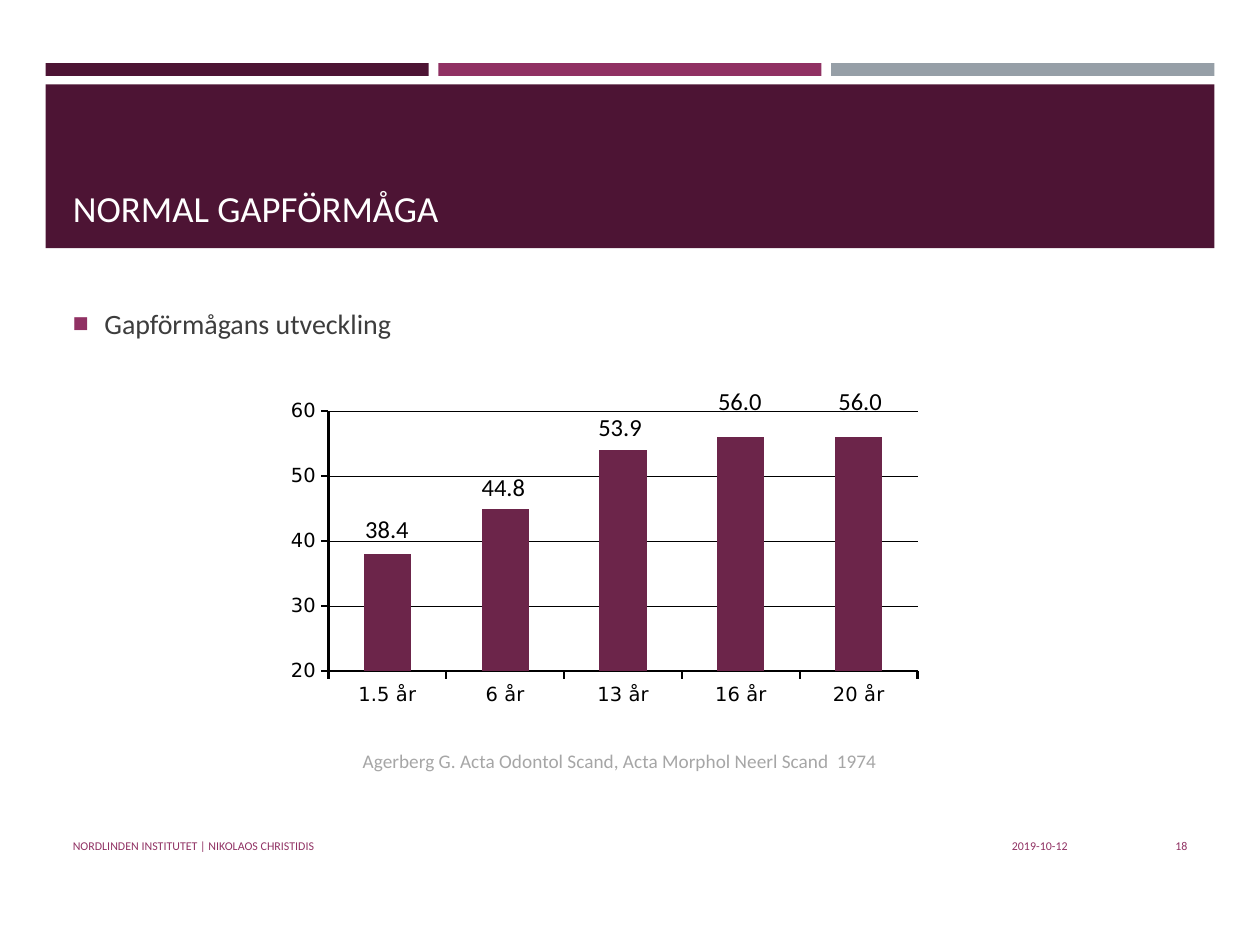
from lxml import etree
from pptx import Presentation
from pptx.chart.data import CategoryChartData
from pptx.dml.color import RGBColor
from pptx.enum.chart import XL_CHART_TYPE, XL_TICK_MARK
from pptx.enum.shapes import MSO_SHAPE
from pptx.enum.text import MSO_ANCHOR, MSO_AUTO_SIZE, PP_ALIGN
from pptx.oxml import parse_xml
from pptx.oxml.ns import nsdecls, qn
from pptx.util import Pt

COLUMN = XL_CHART_TYPE.COLUMN_CLUSTERED
OUTSIDE = XL_TICK_MARK.OUTSIDE
RECTANGLE = MSO_SHAPE.RECTANGLE
NO_AUTOFIT = MSO_AUTO_SIZE.NONE
TOP, MIDDLE, BOTTOM = MSO_ANCHOR.TOP, MSO_ANCHOR.MIDDLE, MSO_ANCHOR.BOTTOM
LEFT, RIGHT = PP_ALIGN.LEFT, PP_ALIGN.RIGHT

COLORS = {
    "plum": "4D1434",
    "berry": "903163",
    "steel": "969FA7",
    "column": "6C254A",
    "body": "3D3D3D",
    "source": "A6A6A6",
    "black": "000000",
    "white": "FFFFFF",
}
TEXT_FONT, CHART_FONT = "Calibri", "DejaVu Sans"

CATEGORIES = ["1.5 år", "6 år", "13 år", "16 år", "20 år"]
VALUES = [38, 45, 54, 56, 56]
# Text, left and top of each value label, relative to the chart
VALUE_LABELS = [
    ("38.4", 43.9, 69.1),
    ("44.8", 110.4, 45),
    ("53.9", 177.1, 10.8),
    ("56.0", 245.5, -3.9),
    ("56.0", 314.3, -3.9),
]


def rgb(name):
    return RGBColor.from_string(COLORS[name])


def set_font(font, size, color, name=TEXT_FONT):
    font.size = Pt(size)
    font.name = name
    font.color.rgb = rgb(color)


def place(shape, left, top, width, height):
    shape.left, shape.top = Pt(left), Pt(top)
    shape.width, shape.height = Pt(width), Pt(height)


def write(shape, text, size, color, anchor=TOP, align=LEFT, wrap=True):
    frame = shape.text_frame
    frame.text = text
    frame.word_wrap = wrap
    frame.auto_size = NO_AUTOFIT
    frame.vertical_anchor = anchor
    paragraph = frame.paragraphs[0]
    paragraph.alignment = align
    set_font(paragraph.font, size, color)
    return paragraph


def add_text(slide, box, text, size, color, **options):
    shape = slide.shapes.add_textbox(*map(Pt, box))
    write(shape, text, size, color, **options)


def add_bar(slide, box, color):
    shape = slide.shapes.add_shape(RECTANGLE, *map(Pt, box))
    shape.shadow.inherit = False
    shape.fill.solid()
    shape.fill.fore_color.rgb = rgb(color)
    shape.line.fill.background()


def add_header(slide, left, top, width, height):
    # Three strips above the title band
    gap = 5.5
    strip_width = (width - 2 * gap) / 3
    for index, color in enumerate(("plum", "berry", "steel")):
        add_bar(slide, (left + index * (strip_width + gap), top, strip_width, 7.4), color)
    add_bar(slide, (left, top + 12.2, width, height - 12.2), "plum")

    # Title, drawn above the band
    title = slide.shapes.title
    slide.shapes._spTree.append(title._element)
    place(title, left + 8.4, top + 19, width - 16.6, 80)
    write(title, "NORMAL GAPFÖRMÅGA", 21, "white", anchor=BOTTOM)


def add_body(slide, left, top, width, height):
    body = slide.placeholders[1]
    place(body, left, top, width, height)
    paragraph = write(body, "Gapförmågans utveckling", 16, "body")
    paragraph.space_before, paragraph.space_after = Pt(3.2), Pt(4.5)

    # Square bullet with a hanging indent
    properties = paragraph._p.get_or_add_pPr()
    properties.set("marL", str(Pt(18)))
    properties.set("indent", str(Pt(-18)))
    color = etree.SubElement(properties, qn("a:buClr"))
    etree.SubElement(color, qn("a:srgbClr"), val=COLORS["berry"])
    etree.SubElement(properties, qn("a:buSzPct"), val="60000")
    etree.SubElement(properties, qn("a:buFont"), typeface=TEXT_FONT)
    etree.SubElement(properties, qn("a:buChar"), char="■")


def format_axis(axis):
    axis.major_tick_mark = OUTSIDE
    axis.format.line.color.rgb = rgb("black")
    axis.format.line.width = Pt(1.25)
    set_font(axis.tick_labels.font, 11.1, "black", CHART_FONT)
    axis.tick_labels.font.bold = False


def set_plot_layout(chart, x, y, w, h):
    plot_area = chart._chartSpace.chart.plotArea
    for layout in plot_area.findall(qn("c:layout")):
        plot_area.remove(layout)
    sizes = "".join(f'<c:{key} val="{value}"/>' for key, value in zip("xywh", (x, y, w, h)))
    plot_area.insert(0, parse_xml(
        f'<c:layout {nsdecls("c")}><c:manualLayout><c:layoutTarget val="inner"/>'
        f'<c:xMode val="edge"/><c:yMode val="edge"/>{sizes}</c:manualLayout></c:layout>'))


def add_column_chart(slide, left, top, width, height):
    data = CategoryChartData(number_format="0")
    data.categories = CATEGORIES
    data.add_series("Series 1", VALUES)
    chart = slide.shapes.add_chart(COLUMN, Pt(left), Pt(top), Pt(width), Pt(height), data).chart
    chart.has_legend = False
    chart.has_title = False
    set_font(chart.font, 11.1, "black", CHART_FONT)
    set_plot_layout(chart, 30 / width, 14 / height, 336.7 / width, 148.6 / height)

    plot = chart.plots[0]
    plot.gap_width = 150
    plot.vary_by_categories = False
    fill = plot.series[0].format.fill
    fill.solid()
    fill.fore_color.rgb = rgb("column")

    format_axis(chart.category_axis)
    axis = chart.value_axis
    format_axis(axis)
    axis.minimum_scale, axis.maximum_scale, axis.major_unit = 20, 60, 10
    axis.has_major_gridlines = True
    axis.major_gridlines.format.line.color.rgb = rgb("black")
    axis.major_gridlines.format.line.width = Pt(0.62)

    # Value labels
    for text, x, y in VALUE_LABELS:
        add_text(slide, (left + x, top + y, 42.5, 24.5), text, 14, "black", wrap=False)


def add_footer(slide, left, top, width, height):
    parts = [
        (0, 408, "NORDLINDEN INSTITUTET | NIKOLAOS CHRISTIDIS", LEFT),
        (414.7, 168, "2019-10-12", RIGHT),
        (width - 62, 62, "18", RIGHT),
    ]
    for offset, part_width, text, align in parts:
        add_text(slide, (left + offset, top, part_width, height), text, 6.8, "berry",
                 anchor=MIDDLE, align=align)


def main():
    presentation = Presentation()
    presentation.slide_width, presentation.slide_height = Pt(720), Pt(540)
    slide = presentation.slides.add_slide(presentation.slide_layouts[1])

    add_header(slide, 26.1, 36, 667.8, 105.8)
    add_body(slide, 34.5, 171.4, 651.6, 289.4)
    add_column_chart(slide, 157.7, 221, 370.8, 192.2)
    add_text(slide, (200.2, 424.8, 319.7, 20.9),
             "Agerberg G. Acta Odontol Scand, Acta Morphol Neerl Scand  1974",
             11, "source", wrap=False)
    add_footer(slide, 34.5, 468.7, 651.2, 28.8)
    presentation.save("out.pptx")


if __name__ == "__main__":
    main()
